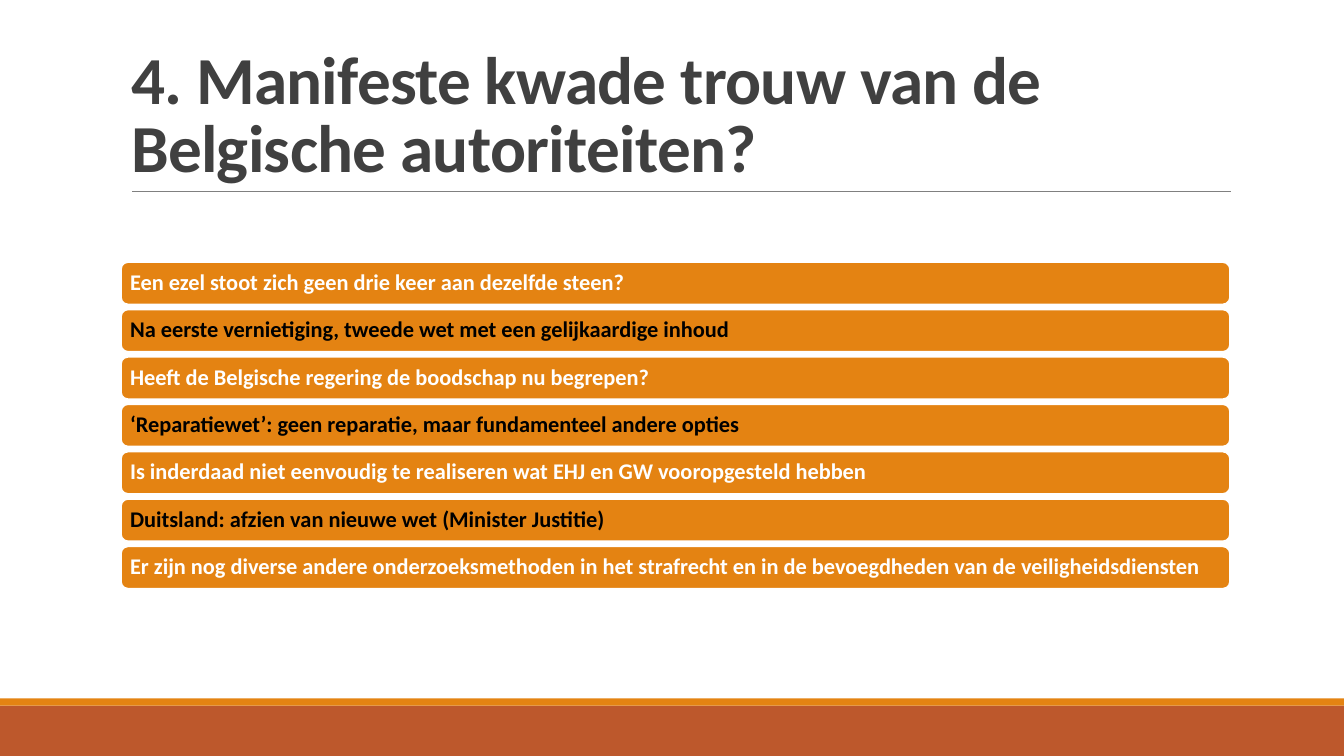
"""Build the slide about the good faith of the Belgian authorities."""
from dataclasses import dataclass

from lxml import etree
from pptx import Presentation
from pptx.dml.color import RGBColor
from pptx.enum import shapes, text
from pptx.oxml import ns
from pptx.util import Inches, Pt


@dataclass(frozen=True)
class Theme:
    font: str = "Calibri"
    orange: str = "E48312"
    rust: str = "BD582C"
    white: str = "FFFFFF"
    black: str = "000000"
    dark: str = "404040"
    grey: str = "808080"
    title_size: float = 48
    bar_size: float = 16


@dataclass(frozen=True)
class Block:
    left: float
    top: float
    width: float
    height: float
    fill: str
    kind: shapes.MSO_SHAPE = shapes.MSO_SHAPE.RECTANGLE


THEME = Theme()
BANDS = (
    Block(0, 7, 13.33, 0.5, THEME.rust),
    Block(0, 6.93, 13.33, 0.07, THEME.orange),
)
STATEMENTS = (
    "Een ezel stoot zich geen drie keer aan dezelfde steen?",
    "Na eerste vernietiging, tweede wet met een gelijkaardige inhoud",
    "Heeft de Belgische regering de boodschap nu begrepen?",
    "‘Reparatiewet’: geen reparatie, maar fundamenteel andere opties",
    "Is inderdaad niet eenvoudig te realiseren wat EHJ en GW vooropgesteld hebben",
    "Duitsland: afzien van nieuwe wet (Minister Justitie)",
    "Er zijn nog diverse andere onderzoeksmethoden in het strafrecht en in de "
    "bevoegdheden van de veiligheidsdiensten",
)
BAR_TOP, BAR_PITCH = 2.6, 0.47


def rgb(value: str) -> RGBColor:
    return RGBColor.from_string(value)


def draw_block(slide, block: Block):
    shape = slide.shapes.add_shape(
        block.kind, Inches(block.left), Inches(block.top),
        Inches(block.width), Inches(block.height))
    shape.shadow.inherit = False
    shape.fill.solid()
    shape.fill.fore_color.rgb = rgb(block.fill)
    shape.line.fill.background()
    return shape


def write_text(shape, words: str, size: float, color: str, spacing: float,
               anchor: text.MSO_ANCHOR):
    frame = shape.text_frame
    frame.text = words
    frame.word_wrap = True
    frame.auto_size = text.MSO_AUTO_SIZE.NONE
    frame.vertical_anchor = anchor
    para = frame.paragraphs[0]
    para.alignment = text.PP_ALIGN.LEFT
    para.line_spacing = spacing
    span = para.runs[0]
    span.font.name = THEME.font
    span.font.size = Pt(size)
    span.font.bold = True
    span.font.color.rgb = rgb(color)
    return span


def draw_title(slide, words: str) -> None:
    title = slide.shapes.title
    title.left, title.top = Inches(1.2), Inches(0.31)
    title.width, title.height = Inches(11), Inches(1.59)
    span = write_text(title, words, THEME.title_size, THEME.dark, 0.85,
                      text.MSO_ANCHOR.BOTTOM)
    span._r.get_or_add_rPr().set("spc", "-50")


def draw_rule(slide) -> None:
    rule = slide.shapes.add_connector(
        shapes.MSO_CONNECTOR.STRAIGHT,
        Inches(1.31), Inches(1.9), Inches(12.21), Inches(1.9))
    rule.line.color.rgb = rgb(THEME.grey)
    rule.line.width = Pt(0.5)
    etree.SubElement(rule._element.spPr, ns.qn("a:effectLst"))


def draw_bar(slide, index: int, words: str) -> None:
    bar = draw_block(slide, Block(
        1.2, BAR_TOP + index * BAR_PITCH, 11, 0.42, THEME.orange,
        shapes.MSO_SHAPE.ROUNDED_RECTANGLE))
    bar.line.color.rgb = rgb(THEME.white)
    bar.line.width = Pt(1.25)
    frame = bar.text_frame
    frame.margin_left = frame.margin_right = Inches(0.07)
    frame.margin_top = frame.margin_bottom = Inches(0.07)
    color = THEME.black if index % 2 else THEME.white
    write_text(bar, words, THEME.bar_size, color, 0.9, text.MSO_ANCHOR.MIDDLE)


def main() -> None:
    deck = Presentation()
    deck.slide_width, deck.slide_height = Inches(13.33), Inches(7.5)
    slide = deck.slides.add_slide(deck.slide_layouts.get_by_name("Title Only"))
    for band in BANDS:
        draw_block(slide, band)
    draw_rule(slide)
    draw_title(slide, "4. Manifeste kwade trouw van de Belgische autoriteiten?")
    for index, words in enumerate(STATEMENTS):
        draw_bar(slide, index, words)
    deck.save("out.pptx")


if __name__ == "__main__":
    main()
